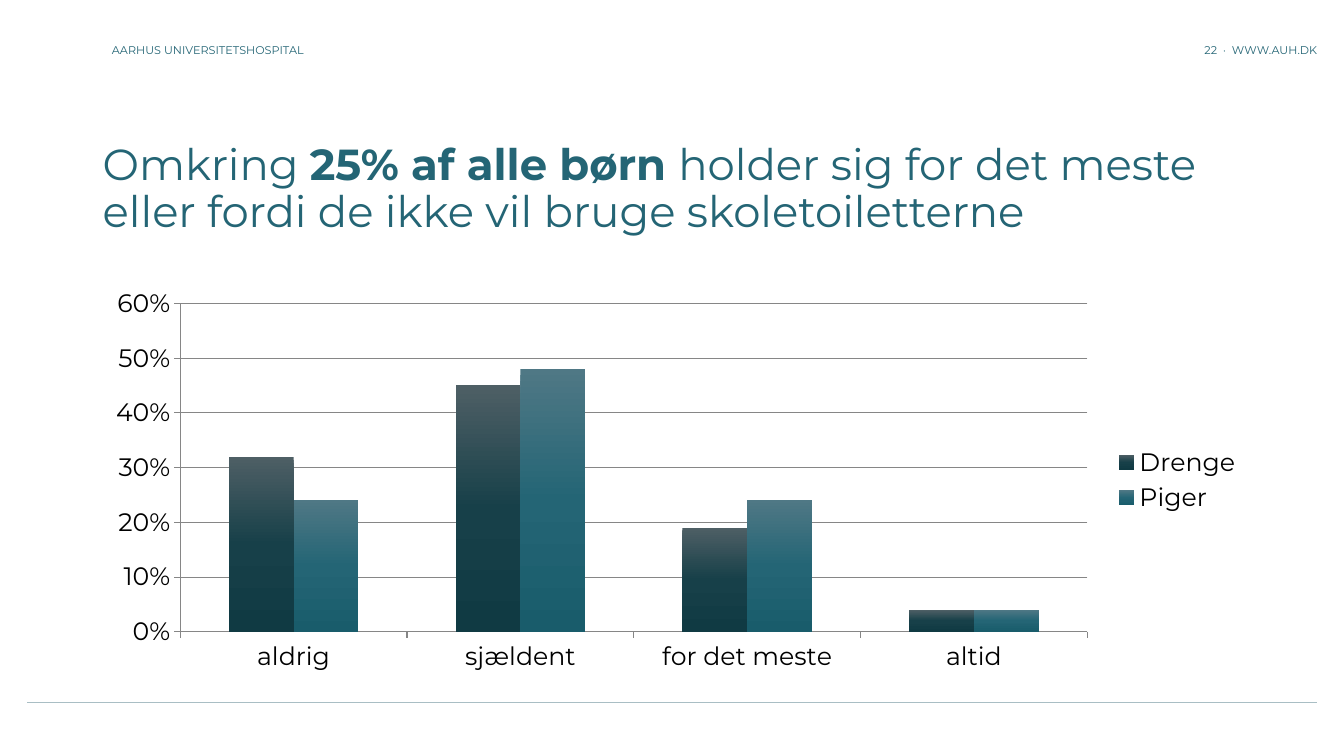
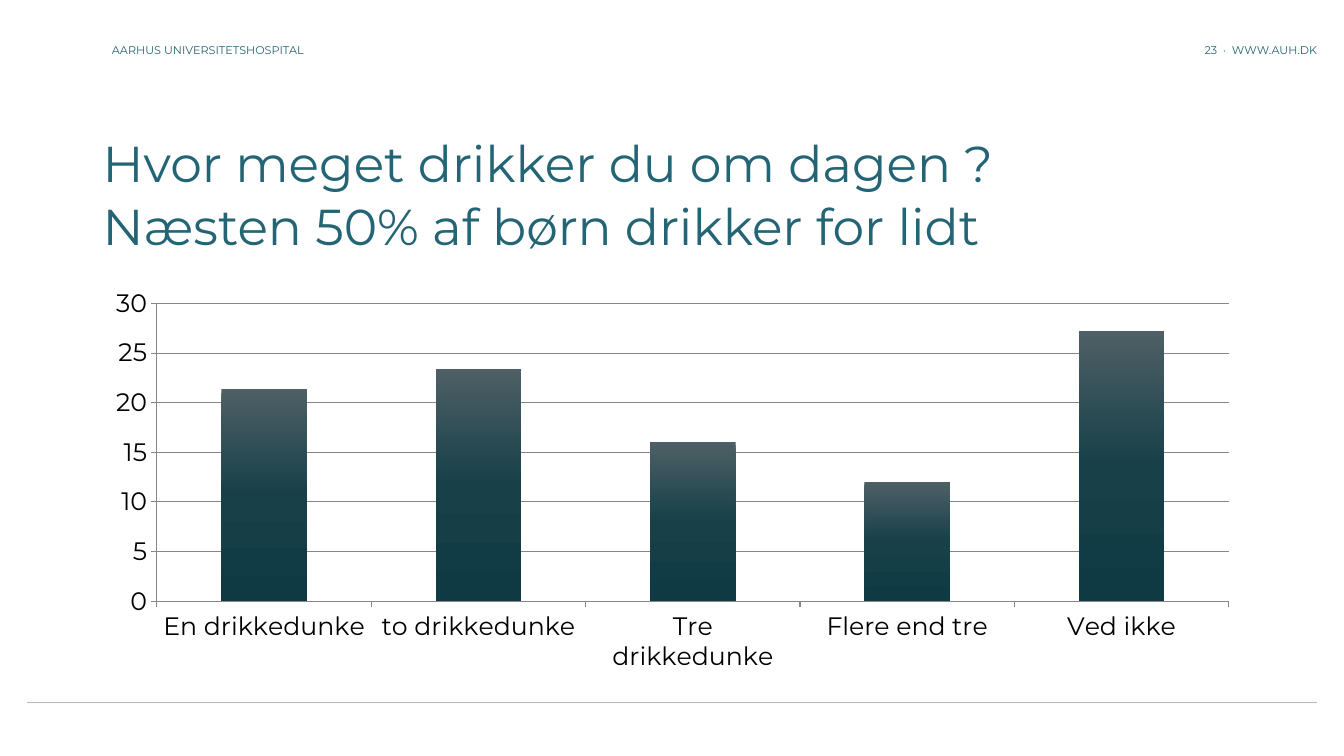
from copy import deepcopy

from pptx import Presentation
from pptx import util as u
from pptx.chart import data as cd
from pptx.dml import color as dc
from pptx.enum import chart as ce, shapes, text
from pptx.oxml import ns

HUES = {
    "teal": "246575",
    "rule": "A9BEC4",
    "axis": "868686",
    "ink": "000000",
}
BARS = [
    ("4E5F65", "174049", "103A43"),
    ("4F7885", "246575", "195C6B"),
]
FACE = "Montserrat"


def rgb(code):
    return dc.RGBColor.from_string(code)


def apply(item, vals):
    for key, val in vals.items():
        setattr(item, key, val)


def style(font, size, hue, bold=False):
    apply(font, {"name": FACE, "size": u.Pt(size), "bold": bold})
    font.color.rgb = rgb(HUES[hue])


def add_text(slide, box, paras, size, inset=0.25, form=None):
    frame = slide.shapes.add_textbox(*map(u.Cm, box)).text_frame
    side = u.Cm(inset)
    apply(frame, {
        "word_wrap": True,
        "vertical_anchor": text.MSO_ANCHOR.BOTTOM,
        "margin_left": side,
        "margin_right": side,
        "margin_top": side // 2,
        "margin_bottom": side // 2,
    })
    for n, runs in enumerate(paras):
        para = frame.add_paragraph() if n else frame.paragraphs[0]
        apply(para, form or {})
        for words, bold in runs:
            run = para.add_run()
            run.text = words
            style(run.font, size, "teal", bold)


def add_title(slide, top, paras, size):
    form = {"line_spacing": 0.9, "space_after": u.Pt(6)}
    add_text(slide, (2.34, top, 29.21, 3.68), paras, size, form=form)


def add_frame(slide, num):
    right = {"alignment": text.PP_ALIGN.RIGHT}
    add_text(slide, (24.59, 0, 8.61, 1.42),
             [[(f"{num}  ·  WWW.AUH.DK", False)]], 8, 0, right)
    add_text(slide, (2.82, 0, 11.3, 1.42),
             [[("AARHUS UNIVERSITETSHOSPITAL", False)]], 8, 0)
    rule = slide.shapes.add_connector(
        shapes.MSO_CONNECTOR.STRAIGHT, *map(u.Cm, (0.69, 17.7, 33.2, 17.7)))
    rule.line.color.rgb = rgb(HUES["rule"])
    rule.line.width = u.Pt(0.5)
    rule._element.spPr.append(
        rule._element.makeelement(ns.qn("a:effectLst"), {}))


def shade(ser, hues):
    fill = ser.format.fill
    fill.gradient()
    fill.gradient_angle = 270
    stops = ser._element.xpath(".//a:gsLst")[0]
    stops.insert(1, deepcopy(stops[0]))
    for n, (stop, hue) in enumerate(zip(fill.gradient_stops, hues)):
        stop.color.rgb = rgb(hue)
        stop.position = n / 2


def set_axis(axis):
    axis.major_tick_mark = ce.XL_TICK_MARK.OUTSIDE
    axis.minor_tick_mark = ce.XL_TICK_MARK.NONE
    style(axis.tick_labels.font, 18, "ink")
    axis.format.line.color.rgb = rgb(HUES["axis"])
    axis.format.line.width = u.Pt(0.75)


def add_bars(slide, cats, rows, form, top, step, legend=False):
    data = cd.CategoryChartData()
    data.categories = cats
    for name, vals in rows:
        data.add_series(name, vals)
    chart = slide.shapes.add_chart(
        ce.XL_CHART_TYPE.COLUMN_CLUSTERED,
        *map(u.Cm, (2.34, 7.06, 29.21, 10.08)), data).chart
    style(chart.font, 10, "ink")
    apply(chart, {"has_title": False, "has_legend": legend})
    if legend:
        apply(chart.legend, {
            "position": ce.XL_LEGEND_POSITION.RIGHT,
            "include_in_layout": False,
        })
        style(chart.legend.font, 18, "ink")
    axis = chart.value_axis
    for each in (chart.category_axis, axis):
        set_axis(each)
    apply(axis, {"minimum_scale": 0, "maximum_scale": top,
                 "major_unit": step, "has_major_gridlines": True})
    apply(axis.tick_labels, {"number_format": form,
                             "number_format_is_linked": False})
    grid = axis.major_gridlines.format.line
    grid.color.rgb = rgb(HUES["axis"])
    grid.width = u.Pt(0.75)
    plot = chart.plots[0]
    apply(plot, {"gap_width": 150, "overlap": 0,
                 "vary_by_categories": False})
    for ser, hues in zip(plot.series, BARS):
        ser.invert_if_negative = False
        shade(ser, hues)


def add_slide(deck, num):
    slide = deck.slides.add_slide(deck.slide_layouts[6])
    add_frame(slide, num)
    return slide


def main():
    deck = Presentation()
    apply(deck, {"slide_width": u.Cm(33.87), "slide_height": u.Cm(19.05)})

    slide = add_slide(deck, 22)
    add_title(slide, 2.41, [[
        ("Omkring ", False),
        ("25% af alle børn ", True),
        ("holder sig for det meste eller fordi de ikke vil bruge "
         "skoletoiletterne", False),
    ]], 31)
    add_bars(slide, ["aldrig", "sjældent", "for det meste", "altid"], [
        ("Drenge", [0.32, 0.45, 0.19, 0.04]),
        ("Piger", [0.24, 0.48, 0.24, 0.04]),
    ], "0%", 0.6, 0.1, legend=True)

    slide = add_slide(deck, 23)
    add_title(slide, 2.9, [
        [("Hvor meget drikker du om dagen ?", False)],
        [("Næsten 50% af børn drikker for lidt", False)],
    ], 36)
    add_bars(slide, ["En drikkedunke", "to drikkedunke", "Tre drikkedunke",
                     "Flere end tre", "Ved ikke"],
             [("Series 1", [21.4, 23.4, 16, 12, 27.2])], "General", 30, 5)

    deck.save("out.pptx")


if __name__ == "__main__":
    main()
